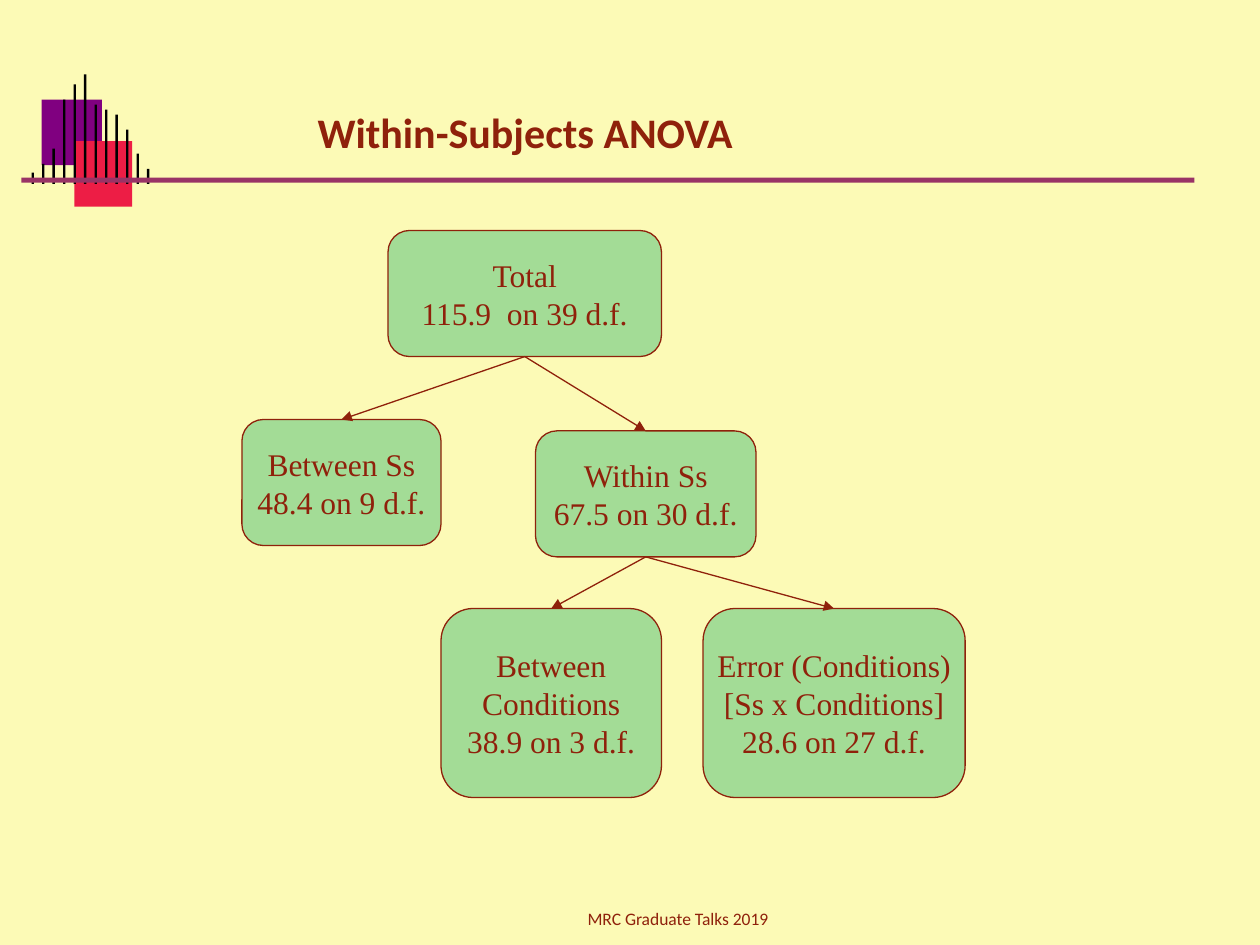
import pptx
import pptx.util
import pptx.dml.color
import pptx.enum.shapes
import pptx.enum.text
import pptx.oxml.ns
import lxml.etree
from dataclasses import dataclass

Inches = pptx.util.Inches
SHAPE = pptx.enum.shapes.MSO_SHAPE
ALIGN = pptx.enum.text.PP_ALIGN
ANCHOR = pptx.enum.text.MSO_ANCHOR


@dataclass(frozen=True)
class Theme:
    background: str = "FCFAB6"
    ink: str = "8F210B"
    box: str = "A3DC96"
    purple: str = "800080"
    red: str = "ED1D45"
    bar: str = "000000"
    rule: str = "993366"
    sans: str = "Calibri"
    serif: str = "Times New Roman"
    title_size: int = 24
    box_size: int = 18
    footer_size: int = 10
    line_width: float = 0.75


THEME = Theme()
TITLE = "Within-Subjects ANOVA"
FOOTER = "MRC Graduate Talks 2019"
BOXES = {
    "between": (1.92, 3.33, 1.58, 1, ["Between Ss", "48.4 on 9 d.f."]),
    "within": (4.25, 3.42, 1.75, 1, ["Within Ss", "67.5 on 30 d.f."]),
    "conditions": (3.5, 4.83, 1.75, 1.5, ["Between", "Conditions", "38.9 on 3 d.f."]),
    "error": (5.58, 4.83, 2.08, 1.5,
              ["Error (Conditions)", "[Ss x Conditions]", "28.6 on 27 d.f."]),
    "total": (3.08, 1.83, 2.17, 1, ["Total", "115.9  on 39 d.f."]),
}
BRANCHES = [("total", "between"), ("total", "within"),
            ("within", "conditions"), ("within", "error")]
SQUARES = [(0.33, 0.79, 0.48, 0.52, THEME.purple), (0.59, 1.12, 0.46, 0.52, THEME.red)]
BAR_HEIGHTS = [0.09, 0.16, 0.28, 0.67, 0.79, 0.87, 0.63, 0.59, 0.55, 0.43, 0.24, 0.12]
BAR_LEFT, BAR_STEP, BAR_WIDTH, BAR_BOTTOM = 0.25, 1 / 12, 0.02, 1.46
RULE = (0.17, 1.41, 9.31, 0.04)


def rgb(color):
    return pptx.dml.color.RGBColor.from_string(color)


def write_text(shape, lines, *, font, size, align, anchor, bold=False, wrap=True):
    frame = shape.text_frame
    frame.auto_size = pptx.enum.text.MSO_AUTO_SIZE.NONE
    frame.word_wrap = wrap
    frame.vertical_anchor = anchor
    frame.text = "\n".join(lines)
    for paragraph in frame.paragraphs:
        paragraph.alignment = align
        paragraph.font.name = font
        paragraph.font.size = pptx.util.Pt(size)
        paragraph.font.bold = bold
        paragraph.font.color.rgb = rgb(THEME.ink)


def add_block(slide, kind, left, top, width, height, fill, outline=None):
    shape = slide.shapes.add_shape(
        kind, Inches(left), Inches(top), Inches(width), Inches(height))
    shape.shadow.inherit = False
    shape.fill.solid()
    shape.fill.fore_color.rgb = rgb(fill)
    if outline:
        shape.line.color.rgb = rgb(outline)
        shape.line.width = pptx.util.Pt(THEME.line_width)
    else:
        shape.line.fill.background()
    return shape


def add_arrow(slide, parent, child):
    arrow = slide.shapes.add_connector(
        pptx.enum.shapes.MSO_CONNECTOR.STRAIGHT, 0, 0, 0, 0)
    arrow.begin_connect(parent, 2)
    arrow.end_connect(child, 0)
    arrow.line.color.rgb = rgb(THEME.ink)
    arrow.line.width = pptx.util.Pt(THEME.line_width)
    qualified = pptx.oxml.ns.qn
    lxml.etree.SubElement(arrow.line._get_or_add_ln(), qualified("a:tailEnd"), type="triangle")
    lxml.etree.SubElement(arrow._element.spPr, qualified("a:effectLst"))


def add_motif(slide):
    for left, top, width, height, color in SQUARES:
        add_block(slide, SHAPE.RECTANGLE, left, top, width, height, color)
    for index, height in enumerate(BAR_HEIGHTS):
        add_block(slide, SHAPE.RECTANGLE, BAR_LEFT + index * BAR_STEP,
                  BAR_BOTTOM - height, BAR_WIDTH, height, THEME.bar)
    add_block(slide, SHAPE.RECTANGLE, *RULE, THEME.rule)


def add_tree(slide):
    boxes = {}
    for name, (left, top, width, height, lines) in BOXES.items():
        box = add_block(slide, SHAPE.ROUNDED_RECTANGLE, left, top, width, height,
                        THEME.box, THEME.ink)
        box.adjustments[0] = 0.17
        write_text(box, lines, font=THEME.serif, size=THEME.box_size,
                   align=ALIGN.CENTER, anchor=ANCHOR.MIDDLE, wrap=False)
        boxes[name] = box
    for parent, child in BRANCHES:
        add_arrow(slide, boxes[parent], boxes[child])


def main():
    presentation = pptx.Presentation()
    presentation.slide_width, presentation.slide_height = Inches(10), Inches(7.5)
    slide = presentation.slides.add_slide(presentation.slide_layouts[5])
    slide.background.fill.solid()
    slide.background.fill.fore_color.rgb = rgb(THEME.background)

    add_motif(slide)
    footer = slide.shapes.add_textbox(Inches(2.92), Inches(6.92), Inches(4.92), Inches(0.5))
    write_text(footer, [FOOTER], font=THEME.sans, size=THEME.footer_size,
               align=ALIGN.CENTER, anchor=ANCHOR.BOTTOM)
    add_tree(slide)

    title = slide.shapes.title
    title.left, title.top = Inches(2.42), Inches(0.36)
    title.width, title.height = Inches(6.76), Inches(1.37)
    write_text(title, [TITLE], font=THEME.sans, size=THEME.title_size,
               align=ALIGN.LEFT, anchor=ANCHOR.MIDDLE, bold=True)

    presentation.save("out.pptx")


if __name__ == "__main__":
    main()
